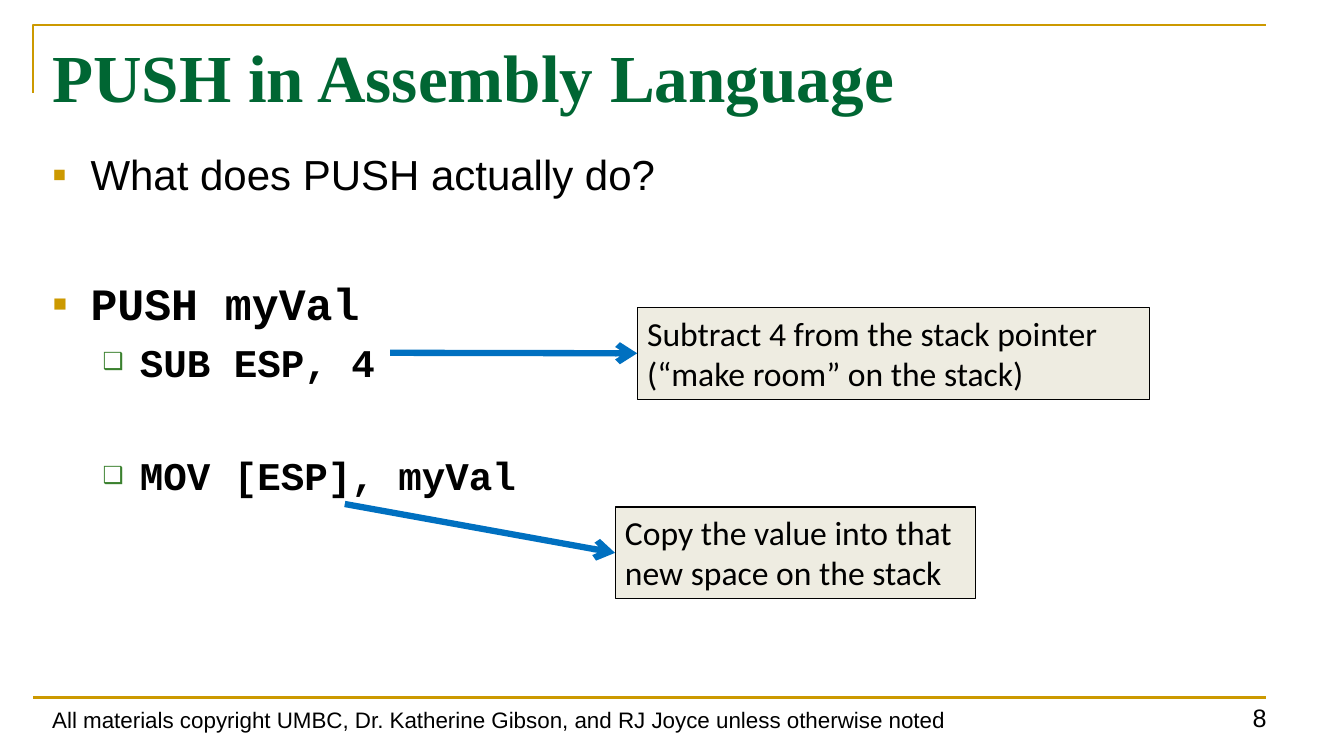
from dataclasses import dataclass

from lxml import etree
from pptx import Presentation
from pptx.dml.color import RGBColor
from pptx.enum.shapes import MSO_CONNECTOR, MSO_SHAPE
from pptx.enum.text import MSO_ANCHOR, PP_ALIGN
from pptx.oxml.ns import qn
from pptx.util import Inches, Pt

STRAIGHT = MSO_CONNECTOR.STRAIGHT
RECTANGLE = MSO_SHAPE.RECTANGLE
TOP, BOTTOM = MSO_ANCHOR.TOP, MSO_ANCHOR.BOTTOM
LEFT, RIGHT = PP_ALIGN.LEFT, PP_ALIGN.RIGHT
LEFT_SIDE = 1

COLORS = {
    "gold": "CC9900",
    "title": "006633",
    "text": "000000",
    "sub_bullet": "3B812F",
    "note": "EEECE1",
    "arrow": "0070C0",
}
RULE_LEFT, RULE_RIGHT = 0.33, 12.56


@dataclass
class Label:
    text: str
    area: tuple[float, float, float, float]
    font: str
    size: float
    color: str = "text"
    bold: bool = False
    anchor: MSO_ANCHOR = TOP
    align: PP_ALIGN = LEFT


@dataclass
class Level:
    margin: float
    indent: float
    mark: str
    color: str
    mark_percent: int


@dataclass
class Bullet:
    text: str
    level: int
    font: str
    size: float
    bold: bool
    gap: float


@dataclass
class Note:
    text: str
    area: tuple[float, float, float, float]
    arrow_start: tuple[float, float]


LABELS = [
    Label("PUSH in Assembly Language", (0.42, 0.3, 12.24, 1.11),
          "Times New Roman", 48, "title", bold=True),
    Label("All materials copyright UMBC, Dr. Katherine Gibson, and RJ Joyce "
          "unless otherwise noted", (0.42, 6.83, 10.33, 0.49),
          "Arial", 16, anchor=BOTTOM),
    Label("8", (11.22, 6.83, 1.44, 0.49), "Arial", 18, anchor=BOTTOM, align=RIGHT),
]
LEVELS = [
    Level(0.38, -0.38, "▪", "gold", 100),
    Level(0.87, -0.37, "❑", "sub_bullet", 60),
]
BULLETS = [
    Bullet("What does PUSH actually do?", 0, "Arial", 30, False, 0),
    Bullet("PUSH myVal", 0, "Courier New", 32, True, 53),
    Bullet("SUB ESP, 4", 1, "Courier New", 28, True, 0),
    Bullet("MOV [ESP], myVal", 1, "Courier New", 28, True, 41),
]
NOTES = [
    Note("Subtract 4 from the stack pointer (“make room” on the stack)",
         (6.32, 3.05, 5.08, 0.91), (3.87, 3.5)),
    Note("Copy the value into that new space on the stack",
         (6.1, 5.03, 3.58, 0.91), (3.42, 5)),
]


def rgb(name: str) -> RGBColor:
    return RGBColor.from_string(COLORS[name])


def set_font(para, name: str, size: float, color: str = "text", bold: bool = False) -> None:
    para.font.name = name
    para.font.size = Pt(size)
    para.font.bold = bold
    para.font.color.rgb = rgb(color)


def set_line(shape, color: str, width: float) -> None:
    shape.line.color.rgb = rgb(color)
    shape.line.width = Pt(width)


def add_line(page, start: tuple[float, float], end: tuple[float, float],
             color: str, width: float):
    line = page.shapes.add_connector(STRAIGHT, *map(Inches, start + end))
    set_line(line, color, width)
    etree.SubElement(line._element.spPr, qn("a:effectLst"))
    return line


def add_frame(page) -> None:
    builder = page.shapes.build_freeform(Inches(RULE_LEFT), Inches(0.92))
    corner = [(Inches(RULE_LEFT), Inches(0.25)), (Inches(RULE_RIGHT), Inches(0.25))]
    builder.add_line_segments(corner, close=False)
    frame = builder.convert_to_shape()
    frame.shadow.inherit = False
    frame.fill.background()
    set_line(frame, "gold", 1.5)
    add_line(page, (RULE_LEFT, 6.92), (RULE_RIGHT, 6.92), "gold", 1.5)


def add_label(page, label: Label) -> None:
    frame = page.shapes.add_textbox(*map(Inches, label.area)).text_frame
    frame.word_wrap = True
    frame.vertical_anchor = label.anchor
    para = frame.paragraphs[0]
    para.text = label.text
    para.alignment = label.align
    set_font(para, label.font, label.size, label.color, label.bold)


def add_mark(para, level: Level) -> None:
    props = para._p.get_or_add_pPr()
    props.set("marL", str(Inches(level.margin)))
    props.set("indent", str(Inches(level.indent)))
    color = etree.SubElement(props, qn("a:buClr"))
    etree.SubElement(color, qn("a:srgbClr"), val=COLORS[level.color])
    etree.SubElement(props, qn("a:buSzPct"), val=str(level.mark_percent * 1000))
    etree.SubElement(props, qn("a:buFont"), typeface="Arial")
    etree.SubElement(props, qn("a:buChar"), char=level.mark)


def add_bullets(page, bullets: list[Bullet]) -> None:
    box = page.shapes.add_textbox(Inches(0.42), Inches(1.42), Inches(12.24), Inches(5.28))
    frame = box.text_frame
    frame.word_wrap = True
    frame.margin_top = 0
    for index, bullet in enumerate(bullets):
        para = frame.add_paragraph() if index else frame.paragraphs[0]
        para.text = bullet.text
        para.level = bullet.level
        para.line_spacing = Pt(40)
        para.space_before = Pt(bullet.gap)
        add_mark(para, LEVELS[bullet.level])
        set_font(para, bullet.font, bullet.size, bold=bullet.bold)


def add_note(page, note: Note) -> None:
    box = page.shapes.add_shape(RECTANGLE, *map(Inches, note.area))
    box.shadow.inherit = False
    box.fill.solid()
    box.fill.fore_color.rgb = rgb("note")
    set_line(box, "text", 0.75)
    frame = box.text_frame
    frame.word_wrap = True
    frame.vertical_anchor = TOP
    para = frame.paragraphs[0]
    para.text = note.text
    para.alignment = LEFT
    set_font(para, "Calibri", 24)

    # Arrow from the code to the note
    left, top, _, height = note.area
    arrow = add_line(page, note.arrow_start, (left, top + height / 2), "arrow", 4.5)
    arrow.end_connect(box, LEFT_SIDE)
    outline = arrow._element.spPr.find(qn("a:ln"))
    etree.SubElement(outline, qn("a:tailEnd"), type="arrow")


def main() -> None:
    deck = Presentation()
    deck.slide_width, deck.slide_height = Inches(13.33), Inches(7.5)
    page = deck.slides.add_slide(deck.slide_layouts[6])

    # Frame, title and footer
    add_frame(page)
    for label in LABELS:
        add_label(page, label)

    # Code and explanations
    add_bullets(page, BULLETS)
    for note in NOTES:
        add_note(page, note)

    deck.save("out.pptx")


if __name__ == "__main__":
    main()
